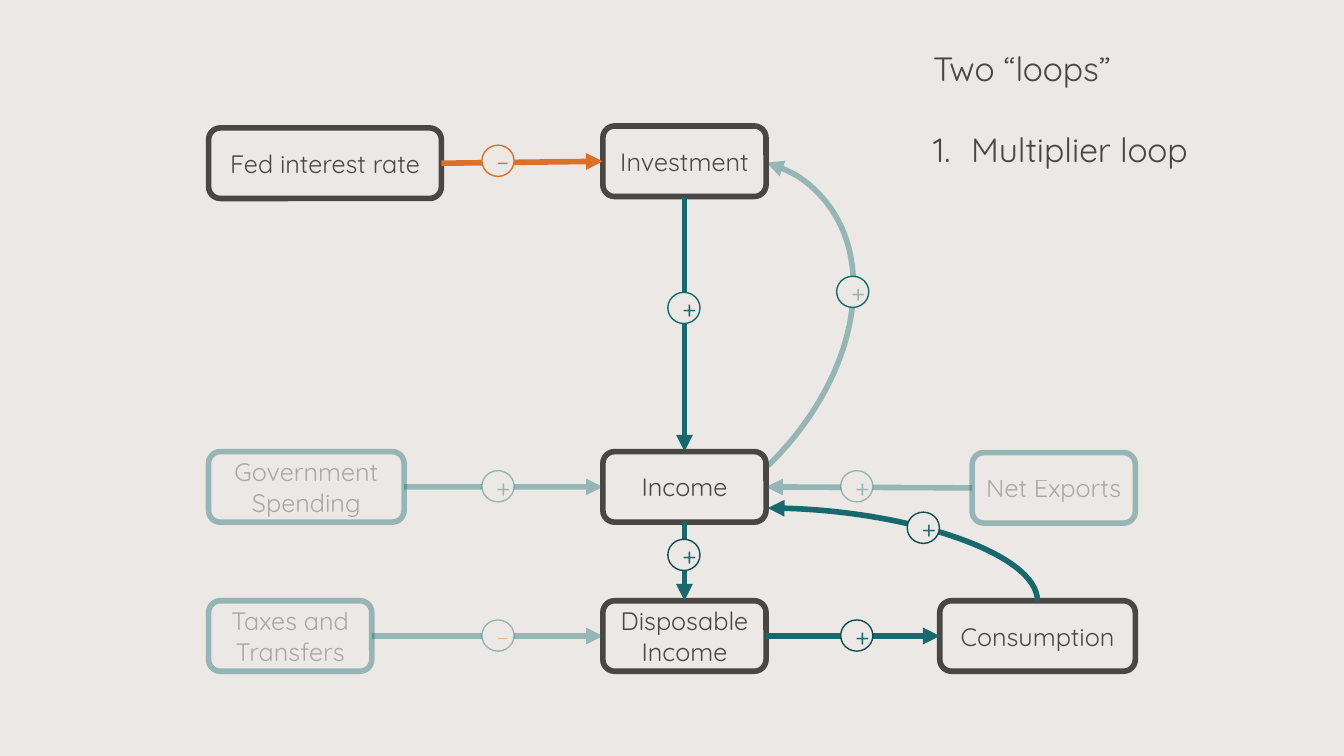
from lxml import etree
from pptx import Presentation
from pptx.dml.color import RGBColor
from pptx.enum import shapes, text
from pptx.oxml import ns
from pptx.util import Pt

PAPER = RGBColor(0xEB, 0xE8, 0xE5)
INK = RGBColor(0x49, 0x46, 0x44)
TEAL = RGBColor(0x18, 0x69, 0x6D)
DEEP_TEAL = RGBColor(0x12, 0x4E, 0x51)
ORANGE = RGBColor(0xDB, 0x70, 0x28)

FORM = shapes.MSO_SHAPE
STRAIGHT, CURVE = shapes.MSO_CONNECTOR.STRAIGHT, shapes.MSO_CONNECTOR.CURVE
TOP, LEFT, BOTTOM, RIGHT = range(4)


class LoopDiagram:
    font_name = "Quicksand"
    label_size, title_size = Pt(18), Pt(24)
    thick, thin = Pt(4), Pt(1)
    box_height = 50.4
    sign_width, sign_height = 23, 22.3

    def __init__(self, slide):
        self.slide = slide
        slide.background.fill.solid()
        slide.background.fill.fore_color.rgb = PAPER

    def fade(self, element):
        """Make every colour inside the element 40% opaque."""
        for color in element.iter(ns.qn("a:srgbClr")):
            etree.SubElement(color, ns.qn("a:alpha")).set("val", "40000")

    def stroke(self, item, color, width, faded=False, arrow=None):
        item.line.color.rgb = color
        item.line.width = width
        outline = item._element.spPr.find(ns.qn("a:ln"))
        if faded:
            self.fade(outline)
        if arrow:
            etree.SubElement(outline, ns.qn(f"a:{arrow}")).set("type", "triangle")

    def style(self, paragraph, size, color, faded=False):
        paragraph.font.name = self.font_name
        paragraph.font.size = size
        paragraph.font.color.rgb = color
        if faded:
            self.fade(paragraph._p.pPr)

    def shape(self, form, x, y, width, height):
        item = self.slide.shapes.add_shape(form, Pt(x), Pt(y), Pt(width), Pt(height))
        item.shadow.inherit = False
        item.fill.background()
        return item

    def label(self, item, words, color, faded):
        item.text_frame.text = words
        item.text_frame.word_wrap = True
        item.text_frame.vertical_anchor = text.MSO_ANCHOR.MIDDLE
        paragraph = item.text_frame.paragraphs[0]
        paragraph.alignment = text.PP_ALIGN.CENTER
        self.style(paragraph, self.label_size, color, faded)

    def box(self, words, x, y, width, faded=False):
        item = self.shape(FORM.ROUNDED_RECTANGLE, x, y, width, self.box_height)
        self.stroke(item, TEAL if faded else INK, self.thick, faded)
        self.label(item, words, INK, faded)
        return item

    def sign(self, words, x, y, color, ring, faded=False, faded_ring=False):
        item = self.shape(FORM.OVAL, x, y, self.sign_width, self.sign_height)
        item.fill.solid()
        item.fill.fore_color.rgb = PAPER
        self.stroke(item, ring, self.thin, faded_ring)
        self.label(item, words, color, faded)

    def connector(self, kind, x1, y1, x2, y2, color, faded=False):
        item = self.slide.shapes.add_connector(kind, Pt(x1), Pt(y1), Pt(x2), Pt(y2))
        self.stroke(item, color, self.thick, faded, "tailEnd")
        etree.SubElement(item._element.spPr, ns.qn("a:effectLst"))
        return item

    def arrow(self, start, start_side, end, end_side, color=TEAL, faded=False):
        item = self.connector(STRAIGHT, 0, 0, 0, 0, color, faded)
        item.begin_connect(start, start_side)
        item.end_connect(end, end_side)

    def bend(self, x1, y1, x2, y2, color):
        """Quarter curve that leaves upwards and arrives leftwards."""
        across, up = x1 - x2, y1 - y2
        mid_x, mid_y = (x1 + x2) / 2, (y1 + y2) / 2
        item = self.connector(CURVE, mid_x - up / 2, mid_y + across / 2,
                              mid_x + up / 2, mid_y - across / 2, color)
        properties = item._element.spPr
        properties.find(ns.qn("a:xfrm")).set("rot", str(270 * 60000))
        properties.find(ns.qn("a:prstGeom")).set("prst", "curvedConnector2")

    def arc(self, x, y, width, height, rotation, start, end):
        item = self.shape(FORM.ARC, x, y, width, height)
        item.rotation = rotation
        item.adjustments[0], item.adjustments[1] = start, end
        self.stroke(item, TEAL, self.thick, True, "headEnd")

    def numbered_list(self, title, entries, x, y, width, height):
        box = self.slide.shapes.add_textbox(Pt(x), Pt(y), Pt(width), Pt(height))
        frame = box.text_frame
        frame.word_wrap = True
        frame.auto_size = text.MSO_AUTO_SIZE.SHAPE_TO_FIT_TEXT
        frame.text = title
        self.style(frame.paragraphs[0], self.title_size, INK)
        for index, entry in enumerate(entries):
            paragraph = frame.add_paragraph()
            paragraph.text = entry
            if index == 0:
                paragraph.space_before = Pt(29)
            properties = paragraph._p.get_or_add_pPr()
            properties.set("marL", str(Pt(27)))
            properties.set("indent", str(-Pt(27)))
            number = etree.SubElement(properties, ns.qn("a:buAutoNum"))
            number.set("type", "arabicPeriod")
            self.style(paragraph, self.title_size, INK)


def main():
    deck = Presentation()
    deck.slide_width, deck.slide_height = Pt(960), Pt(540)
    diagram = LoopDiagram(deck.slides.add_slide(deck.slide_layouts[6]))

    # Boxes: inputs on the left, the main chain in the middle, spending on the right
    left, middle, right_edge = 149, 430.6, 811
    narrow, wide = 116.6, 139.7
    income_row, disposable_row = 322.6, 429.1
    fed_rate = diagram.box("Fed interest rate", left, 91.4, 166.3)
    government = diagram.box("Government Spending", left, income_row, wide, True)
    taxes = diagram.box("Taxes and Transfers", left, disposable_row, narrow, True)
    investment = diagram.box("Investment", middle, 90, narrow)
    income = diagram.box("Income", middle, income_row, narrow)
    disposable = diagram.box("Disposable Income", middle, disposable_row, narrow)
    exports = diagram.box("Net Exports", right_edge - narrow, 323.3, narrow, True)
    consumption = diagram.box("Consumption", right_edge - wide, disposable_row, wide)

    # Straight arrows
    diagram.arrow(fed_rate, RIGHT, investment, LEFT, ORANGE)
    diagram.arrow(investment, BOTTOM, income, TOP)
    diagram.arrow(income, BOTTOM, disposable, TOP)
    diagram.arrow(disposable, RIGHT, consumption, LEFT)
    diagram.arrow(government, RIGHT, income, LEFT, faded=True)
    diagram.arrow(taxes, RIGHT, disposable, LEFT, faded=True)
    diagram.arrow(exports, LEFT, income, RIGHT, faded=True)

    # Curved feedback arrows into income and investment
    diagram.bend(741, 429.1, 548.4, 362.9, TEAL)
    diagram.arc(356.4, 90, 227.5, 320.4, 45.7, 152.62, 0.46)

    # Signs on the arrows
    left_sign, middle_sign, right_sign = 344.2, 477, 600.5
    income_sign, disposable_sign = 336.2, 442.8
    diagram.sign("–", left_sign, 103.7, ORANGE, ORANGE)
    diagram.sign("+", middle_sign, 208.8, TEAL, TEAL)
    diagram.sign("+", middle_sign, 385.2, TEAL, DEEP_TEAL)
    diagram.sign("+", right_sign, disposable_sign, TEAL, DEEP_TEAL)
    diagram.sign("+", 648, 365.8, TEAL, DEEP_TEAL)
    diagram.sign("+", 597.6, 197.3, TEAL, TEAL, faded=True)
    diagram.sign("–", left_sign, disposable_sign, ORANGE, TEAL, True, True)
    for sign_x in (left_sign, right_sign):
        diagram.sign("+", sign_x, income_sign, TEAL, TEAL, True, True)

    # Heading and list of loops
    diagram.numbered_list("Two “loops”", ["Multiplier loop"], 659.5, 31, 280, 94.3)

    deck.save("out.pptx")


if __name__ == "__main__":
    main()
